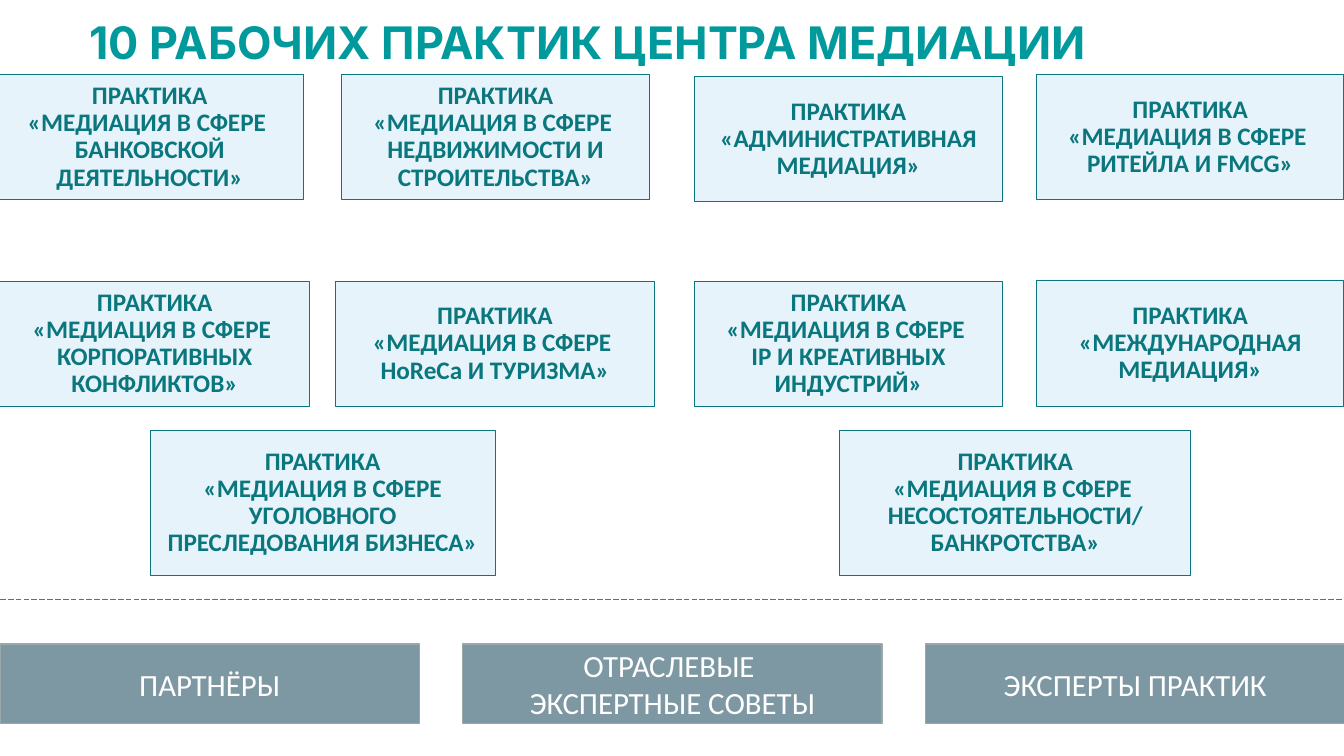
from pptx import Presentation
from pptx import util as u
from pptx.dml.color import RGBColor
from pptx.enum import dml, shapes, text
from pptx.oxml.ns import qn
from lxml import etree

TEAL = "0A767D"
PRACTICE_WIDTH, PRACTICE_HEIGHT = 3.05, 1.24
TOP_ROW, MIDDLE_ROW, BOTTOM_ROW = 0.74, 2.79, 4.27
SPHERE = "«МЕДИАЦИЯ В СФЕРЕ "

PRACTICES = [
    (-0.04, TOP_ROW, PRACTICE_WIDTH, PRACTICE_HEIGHT, SPHERE + "\nБАНКОВСКОЙ ДЕЯТЕЛЬНОСТИ»"),
    (3.39, TOP_ROW, PRACTICE_WIDTH, PRACTICE_HEIGHT, SPHERE + "\nНЕДВИЖИМОСТИ И СТРОИТЕЛЬСТВА»"),
    (6.89, 0.76, PRACTICE_WIDTH, PRACTICE_HEIGHT, "«АДМИНИСТРАТИВНАЯ МЕДИАЦИЯ»"),
    (10.28, TOP_ROW, PRACTICE_WIDTH, PRACTICE_HEIGHT, SPHERE + "\nРИТЕЙЛА И FMCG»"),
    (0, MIDDLE_ROW, 3.07, PRACTICE_HEIGHT, SPHERE + "\nКОРПОРАТИВНЫХ КОНФЛИКТОВ»"),
    (3.33, MIDDLE_ROW, 3.16, PRACTICE_HEIGHT, SPHERE + "\nHoReCa И ТУРИЗМА»"),
    (6.89, MIDDLE_ROW, PRACTICE_WIDTH, PRACTICE_HEIGHT, SPHERE + "\nIP И КРЕАТИВНЫХ ИНДУСТРИЙ»"),
    (10.28, 2.78, PRACTICE_WIDTH, 1.25, "«МЕЖДУНАРОДНАЯ МЕДИАЦИЯ»"),
    (1.49, BOTTOM_ROW, 3.42, 1.44, SPHERE + "УГОЛОВНОГО ПРЕСЛЕДОВАНИЯ БИЗНЕСА»"),
    (8.33, BOTTOM_ROW, 3.48, 1.44, SPHERE + "\nНЕСОСТОЯТЕЛЬНОСТИ/ БАНКРОТСТВА»"),
]
SUPPORT = ["ПАРТНЁРЫ", "ОТРАСЛЕВЫЕ \nЭКСПЕРТНЫЕ СОВЕТЫ", "ЭКСПЕРТЫ ПРАКТИК"]


def color(value):
    return RGBColor.from_string(value)


def write(shape, content, size, fill, font="Calibri", bold=False, spacing=1.0,
          align=text.PP_ALIGN.CENTER, anchor=text.MSO_ANCHOR.MIDDLE, inset=None):
    frame = shape.text_frame
    frame.word_wrap = True
    frame.vertical_anchor = anchor
    if inset is not None:
        frame.margin_left = frame.margin_right = u.Inches(inset)
        frame.margin_top = frame.margin_bottom = u.Inches(inset)
    paragraph = frame.paragraphs[0]
    paragraph.alignment = align
    paragraph.line_spacing = spacing
    for index, line in enumerate(content.split("\n")):
        if index:
            paragraph.add_line_break()
        run = paragraph.add_run()
        run.text = line
        run.font.name = font
        run.font.size = u.Pt(size)
        run.font.bold = bold
        run.font.color.rgb = color(fill)


class PracticeSlide:
    def __init__(self, presentation):
        self.slide = presentation.slides.add_slide(presentation.slide_layouts[6])

    def title(self, left, top, width, height, content):
        box = self.slide.shapes.add_textbox(*map(u.Inches, (left, top, width, height)))
        write(box, content, 32, "009A9D", font="Inter", bold=True, spacing=0.9,
              align=text.PP_ALIGN.LEFT, anchor=text.MSO_ANCHOR.BOTTOM)

    def box(self, left, top, width, height, fill, line, weight):
        shape = self.slide.shapes.add_shape(
            shapes.MSO_SHAPE.RECTANGLE, *map(u.Inches, (left, top, width, height)))
        shape.shadow.inherit = False
        shape.fill.solid()
        shape.fill.fore_color.rgb = color(fill)
        shape.line.color.rgb = color(line)
        shape.line.width = u.Pt(weight)
        return shape

    def practice(self, left, top, width, height, name):
        shape = self.box(left, top, width, height, "E6F3FA", TEAL, 0.75)
        write(shape, "ПРАКТИКА\n" + name, 18, TEAL, bold=True, spacing=0.9, inset=0.14)

    def support(self, left, name):
        shape = self.box(left, 6.39, 4.16, 0.79, "7E98A3", "9BA8A9", 1)
        write(shape, name, 22, "FFFFFF")

    def divider(self, top, width):
        line = self.slide.shapes.add_connector(
            shapes.MSO_CONNECTOR.STRAIGHT, *map(u.Inches, (0, top, width, top)))
        line.line.color.rgb = color("00999C")
        line.line.width = u.Pt(0.5)
        line.line.dash_style = dml.MSO_LINE.LONG_DASH
        etree.SubElement(line._element.spPr, qn("a:effectLst"))


def main():
    presentation = Presentation()
    presentation.slide_width = u.Inches(13.33)
    presentation.slide_height = u.Inches(7.5)
    page = PracticeSlide(presentation)
    page.title(0.79, -0.17, 11.5, 0.91, "10 РАБОЧИХ ПРАКТИК ЦЕНТРА МЕДИАЦИИ")
    for practice in PRACTICES:
        page.practice(*practice)
    page.divider(5.95, 13.33)
    for column, name in enumerate(SUPPORT):
        page.support(4.59 * column, name)
    presentation.save("out.pptx")


if __name__ == "__main__":
    main()
